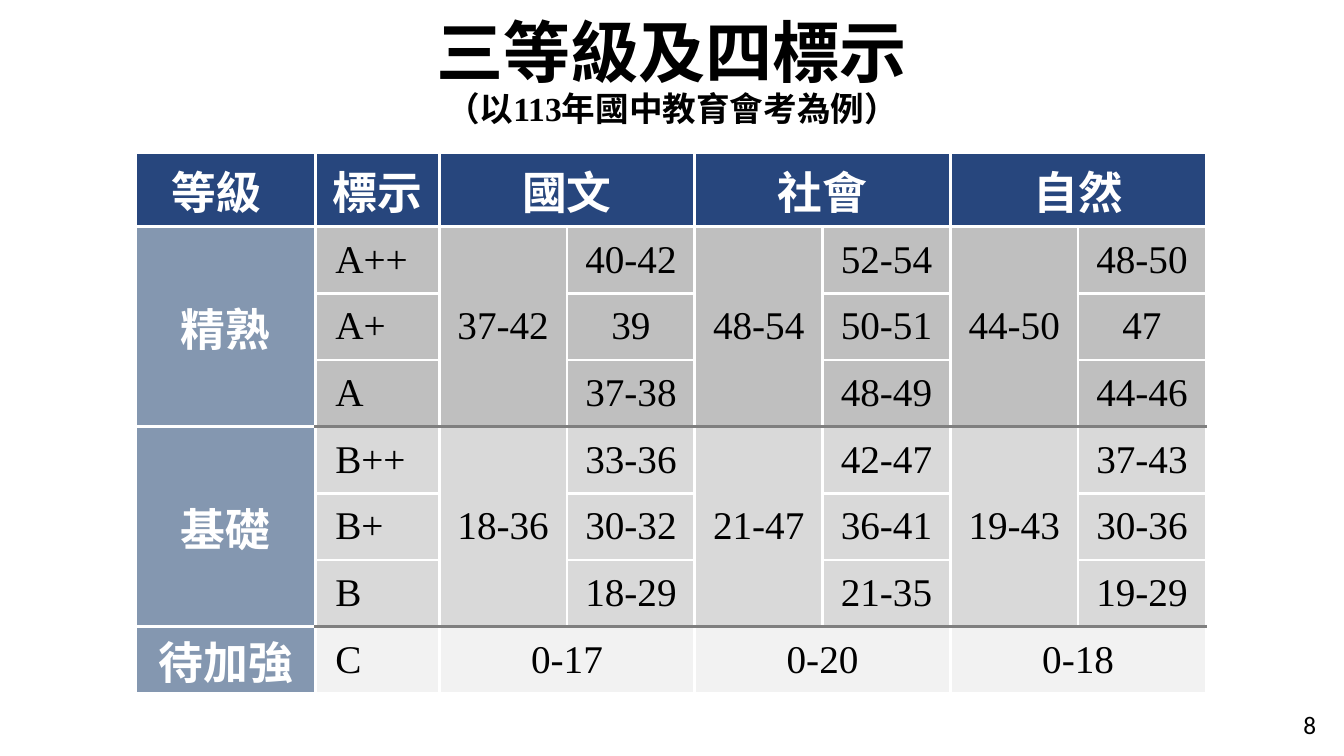
from lxml import etree
from pptx import Presentation
from pptx import util as u
from pptx.dml.color import RGBColor
from pptx.enum import text as t
from pptx.oxml import ns

NAVY = RGBColor(0x27, 0x46, 0x7D)
STEEL = RGBColor(0x84, 0x97, 0xB0)
GREY = RGBColor(0x7F, 0x7F, 0x7F)
WHITE = RGBColor(0xFF, 0xFF, 0xFF)
BLACK = RGBColor(0, 0, 0)
SANS, SERIF = "Calibri", "Times New Roman"
MID, LEFT = t.PP_ALIGN.CENTER, t.PP_ALIGN.LEFT

HEAD = {"size": u.Pt(32), "name": SERIF, "bold": True}
BODY = {"size": u.Pt(28), "name": SERIF, "bold": False}

# Level, fill, and rows of mark + score range per subject
SUBJECTS = ["國文", "社會", "自然"]
LEVELS = [
    ("精熟", RGBColor(0xBF, 0xBF, 0xBF), ["37-42", "48-54", "44-50"],
     [("A++", "40-42", "52-54", "48-50"),
      ("A+", "39", "50-51", "47"),
      ("A", "37-38", "48-49", "44-46")]),
    ("基礎", RGBColor(0xD9, 0xD9, 0xD9), ["18-36", "21-47", "19-43"],
     [("B++", "33-36", "42-47", "37-43"),
      ("B+", "30-32", "36-41", "30-36"),
      ("B", "18-29", "21-35", "19-29")]),
    ("待加強", RGBColor(0xF2, 0xF2, 0xF2), ["0-17", "0-20", "0-18"],
     [("C",)]),
]


def style(font, color, form):
    for key, val in form.items():
        setattr(font, key, val)
    font.color.rgb = color


def add_run(para, words, color, form):
    run = para.add_run()
    run.text = words
    style(run.font, color, form)


def edge(cell, side, color):
    line = etree.SubElement(cell._tc.get_or_add_tcPr(),
                            ns.qn("a:ln" + side), w=str(u.Pt(2.25)))
    fill = etree.SubElement(line, ns.qn("a:solidFill"))
    etree.SubElement(fill, ns.qn("a:srgbClr"), val=str(color))


def fill_cell(cell, words, back, color, form, align=MID, left=0.05):
    cell.fill.solid()
    cell.fill.fore_color.rgb = back
    cell.vertical_anchor = t.MSO_ANCHOR.MIDDLE
    cell.margin_left, cell.margin_right = u.Cm(left), u.Cm(0.05)
    cell.margin_top = cell.margin_bottom = 0
    para = cell.text_frame.paragraphs[0]
    para.alignment = align
    add_run(para, words, color, form)


def add_title(slide, box):
    title = slide.shapes.title
    title.left, title.top, title.width, title.height = map(u.Cm, box)
    frame = title.text_frame
    frame.vertical_anchor = t.MSO_ANCHOR.MIDDLE
    frame.word_wrap = True
    para = frame.paragraphs[0]
    para.alignment, para.line_spacing = MID, 0.9
    big = {"size": u.Pt(48), "name": SANS, "bold": True}
    small = {**big, "size": u.Pt(24)}
    add_run(para, "三等級及四標示", BLACK, big)
    para.add_line_break()
    add_run(para, "（以", BLACK, small)
    add_run(para, "113", BLACK, {**small, "name": SERIF})
    add_run(para, "年國中教育會考為例）", BLACK, small)


def add_grid(slide, box):
    grid = slide.shapes.add_table(8, 8, *map(u.Cm, box)).table
    for col, wide in zip(grid.columns, [4.52, 3.12] + [3.22] * 6):
        col.width = u.Cm(wide)
    for row, high in zip(grid.rows, [1.87] + [1.68] * 7):
        row.height = u.Cm(high)

    # Merged areas: subjects across, levels down
    for col in (2, 4, 6):
        for row in (0, 7):
            grid.cell(row, col).merge(grid.cell(row, col + 1))
    for col in (0, 2, 4, 6):
        for row in (1, 4):
            grid.cell(row, col).merge(grid.cell(row + 2, col))

    # White borders, grey between levels
    for row in range(8):
        for col in range(8):
            cell = grid.cell(row, col)
            last = row + max(cell.span_height, 1) - 1
            for side in "LRTB":
                dark = col and (side == "T" and row in (4, 7)
                                or side == "B" and last in (3, 6))
                edge(cell, side, GREY if dark else WHITE)

    # Header row
    fill_cell(grid.cell(0, 0), "等級", NAVY, WHITE, HEAD, LEFT, 0.9)
    fill_cell(grid.cell(0, 1), "標示", NAVY, WHITE, HEAD)
    for num, name in enumerate(SUBJECTS):
        fill_cell(grid.cell(0, 2 + 2 * num), name, NAVY, WHITE, HEAD)

    # Levels
    top = 1
    for name, back, totals, marks in LEVELS:
        fill_cell(grid.cell(top, 0), name, STEEL, WHITE, HEAD)
        for num, total in enumerate(totals):
            fill_cell(grid.cell(top, 2 + 2 * num), total, back, BLACK, BODY)
        for row, (mark, *scores) in enumerate(marks, top):
            fill_cell(grid.cell(row, 1), mark, back, BLACK, BODY, LEFT, 0.5)
            for num, score in enumerate(scores):
                fill_cell(grid.cell(row, 3 + 2 * num), score, back, BLACK, BODY)
        top += len(marks)


def add_page(slide, box):
    frame = slide.shapes.add_textbox(*map(u.Cm, box)).text_frame
    frame.word_wrap = True
    frame.vertical_anchor = t.MSO_ANCHOR.MIDDLE
    add_run(frame.paragraphs[0], "8", BLACK, {"size": u.Pt(18), "name": SANS})


def main():
    deck = Presentation()
    deck.slide_width, deck.slide_height = u.Cm(33.87), u.Cm(19.05)
    slide = deck.slides.add_slide(deck.slide_layouts[5])
    add_title(slide, (2.33, 0.03, 29.21, 3.68))
    add_grid(slide, (3.43, 3.84, 26.96, 13.63))
    add_page(slide, (32.6, 17.74, 1.45, 1.02))
    deck.save("out.pptx")


if __name__ == "__main__":
    main()
